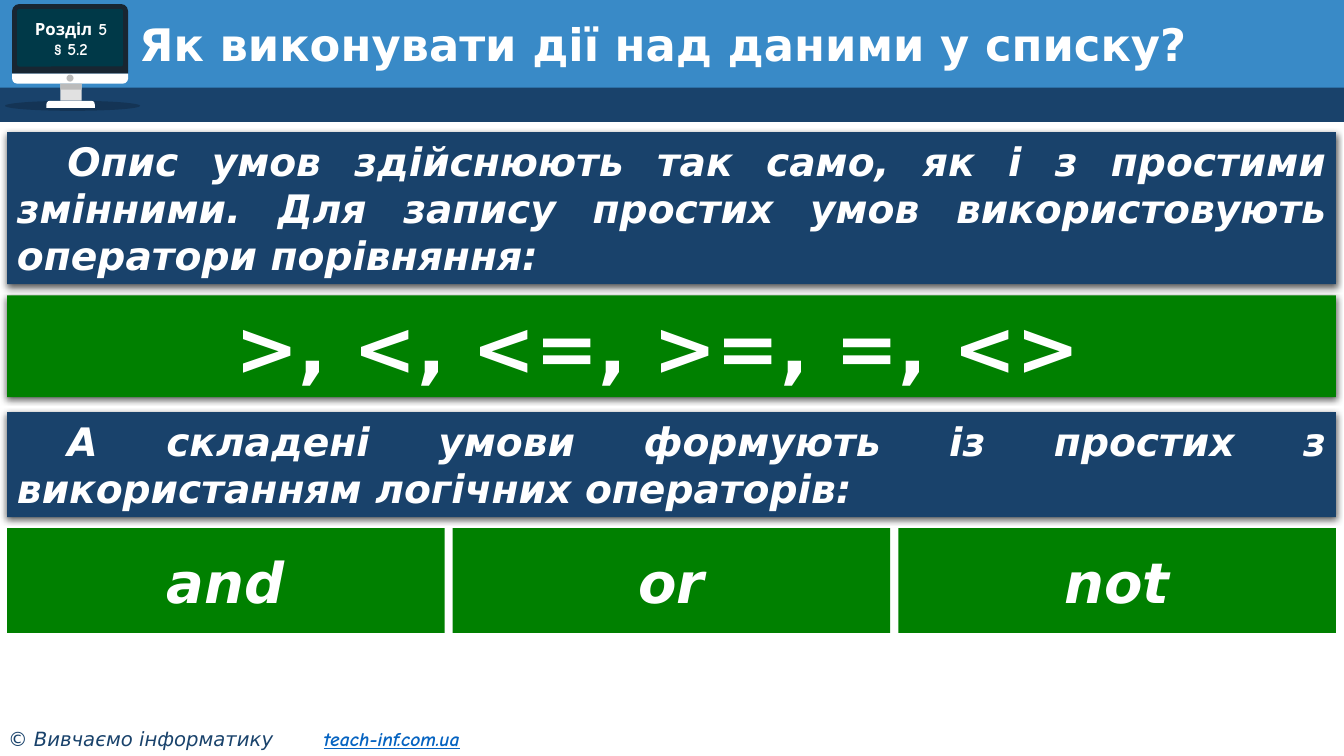
from pptx import Presentation
from pptx.dml.color import RGBColor
from pptx.enum.shapes import MSO_SHAPE as SHAPE
from pptx.enum.text import MSO_ANCHOR as ANCHOR, MSO_AUTO_SIZE as AUTO, PP_ALIGN as ALIGN
from pptx.oxml import parse_xml
from pptx.oxml.ns import nsdecls
from pptx.util import Inches, Pt

SANS, COMIC = "DejaVu Sans", "Comic Neue"
NAVY, BLUE, GREEN, WHITE = "19426B", "398AC7", "008000", "FFFFFF"


def rgb(value):
    """Turn a hex string into a colour."""
    return RGBColor.from_string(value)


def add_run(p, text, size=28, font=SANS, color=WHITE, bold=True, italic=False, underline=False):
    """Add formatted text to a paragraph."""
    r = p.add_run()
    r.text = text
    f = r.font
    f.name, f.size, f.color.rgb = font, Pt(size), rgb(color)
    f.bold, f.italic, f.underline = bold, italic, underline


def write(sp, lines, align=ALIGN.LEFT, anchor=ANCHOR.TOP, indent=0, **fmt):
    """Fill a shape with one paragraph per line."""
    tf = sp.text_frame
    tf.word_wrap, tf.auto_size, tf.vertical_anchor = True, AUTO.NONE, anchor
    for i, line in enumerate(lines):
        p = tf.add_paragraph() if i else tf.paragraphs[0]
        p.alignment = align
        if indent:
            p._p.get_or_add_pPr().set("indent", str(Inches(indent)))
        add_run(p, line, **fmt)


def add_block(s, box, fill, kind=SHAPE.RECTANGLE, adj=(), alpha=None, shadow=False):
    """Add a borderless filled shape."""
    sp = s.shapes.add_shape(kind, *map(Inches, box))
    sp.shadow.inherit = False
    sp.fill.solid()
    sp.fill.fore_color.rgb = rgb(fill)
    sp.line.fill.background()
    for i, value in enumerate(adj):
        sp.adjustments[i] = value
    if alpha is not None:
        clr = sp._element.spPr.find(".//{*}srgbClr")
        clr.append(parse_xml(f'<a:alpha {nsdecls("a")} val="{alpha * 1000}"/>'))
    if shadow:
        sp._element.spPr.find("{*}effectLst").append(parse_xml(
            f'<a:outerShdw {nsdecls("a")} blurRad="{Pt(4.5)}" dist="{Pt(1.5)}" dir="5400000" '
            'algn="t" rotWithShape="0"><a:srgbClr val="000000"><a:alpha val="63000"/>'
            '</a:srgbClr></a:outerShdw>'))
    return sp


def add_header(s, x, y, w):
    """Place the two header bands and the slide title."""
    add_block(s, (x, y, w, 0.91), BLUE)
    add_block(s, (x, y + 0.87, w, 0.34), NAVY)
    title = s.shapes.title
    title.left, title.top, title.width, title.height = map(Inches, (x + 1.28, y + 0.18, 11.72, 0.58))
    write(title, ["Як виконувати дії над даними у списку?"], anchor=ANCHOR.MIDDLE, size=32)
    title.text_frame.paragraphs[0].line_spacing = 0.9
    s.shapes._spTree.append(title._element)


def add_monitor(s, x, y):
    """Draw the computer with the chapter label on its screen."""
    top_round = SHAPE.ROUND_2_SAME_RECTANGLE
    parts = [
        ((0, 0.96, 1.34, 0.1), "000000", SHAPE.OVAL, (), 20),
        ((0.07, 0, 1.15, 0.69), "182632", top_round, (0.1, 0), None),
        ((0.07, 0.69, 1.15, 0.1), WHITE, top_round, (0, 0.5), None),
        ((0.55, 0.79, 0.21, 0.17), "E1E1E1", SHAPE.RECTANGLE, (), None),
        ((0.55, 0.79, 0.21, 0.06), "BBBBBB", SHAPE.RECTANGLE, (), None),
        ((0.41, 0.96, 0.48, 0.07), WHITE, top_round, (0.5, 0), None),
        ((0.61, 0.7, 0.07, 0.07), "BBBBBB", SHAPE.OVAL, (), None),
        ((0.12, 0.05, 1.05, 0.57), "003948", SHAPE.ROUNDED_RECTANGLE, (0.036,), None),
    ]
    for (dx, dy, w, h), fill, kind, adj, alpha in parts:
        add_block(s, (x + dx, y + dy, w, h), fill, kind, adj, alpha)
    label = s.shapes.add_textbox(*map(Inches, (x + 0.08, y + 0.05, 1.15, 0.59)))
    write(label, ["Розділ 5", "§ 5.2"], ALIGN.CENTER, ANCHOR.MIDDLE, size=12, font=COMIC)


def add_note(s, box, text):
    """Place a navy panel with a justified explanation."""
    sp = add_block(s, box, NAVY, shadow=True)
    write(sp, [text], ALIGN.JUSTIFY, indent=0.5, italic=True)


def add_comparisons(s, box):
    """Place the green panel of comparison operators."""
    sp = add_block(s, box, GREEN, shadow=True)
    write(sp, [">, <, <=, >=, =, <> "], ALIGN.CENTER, size=54)


def add_logic_row(s, x, y, w, h, words, gap=0.08):
    """Share a row equally between the logical operators."""
    cell = (w - gap * (len(words) - 1)) / len(words)
    for i, word in enumerate(words):
        sp = add_block(s, (x + i * (cell + gap), y, cell, h), GREEN)
        write(sp, [word], ALIGN.CENTER, ANCHOR.MIDDLE, size=40, italic=True)


def add_footer(s, x, y, w, h):
    """Place the copyright line and the site address."""
    box = s.shapes.add_textbox(*map(Inches, (x, y, w, h)))
    tf = box.text_frame
    tf.word_wrap, tf.margin_left = True, Inches(0.08)
    p = tf.paragraphs[0]
    p._p.get_or_add_pPr().append(parse_xml(
        f'<a:tabLst {nsdecls("a")}><a:tab pos="{Inches(3.13)}" algn="l"/></a:tabLst>'))
    add_run(p, "© Вивчаємо інформатику\t", size=14, color=NAVY, bold=False, italic=True)
    add_run(p, "teach-inf.com.ua", size=14, font=COMIC, color="0563C1", italic=True, underline=True)


def main():
    """Build and save the slide."""
    prs = Presentation()
    prs.slide_width, prs.slide_height = Inches(13.33), Inches(7.5)
    s = prs.slides.add_slide(prs.slide_layouts[5])
    x, w = 0.07, 13.18
    add_header(s, 0, 0, 13.33)
    add_monitor(s, 0.05, 0.04)
    add_note(s, (x, 1.31, w, 1.51),
             "Опис умов здійснюють так само, як і з простими змінними. "
             "Для запису простих умов використовують оператори порівняння:")
    add_comparisons(s, (x, 2.93, w, 1.01))
    add_note(s, (x, 4.09, w, 1.04),
             "А складені умови формують із простих з використанням логічних операторів:")
    add_logic_row(s, x, 5.24, w, 1.04, ["and", "or", "not"])
    add_footer(s, 0, 7.16, 5.23, 0.34)
    prs.save("out.pptx")


if __name__ == "__main__":
    main()
